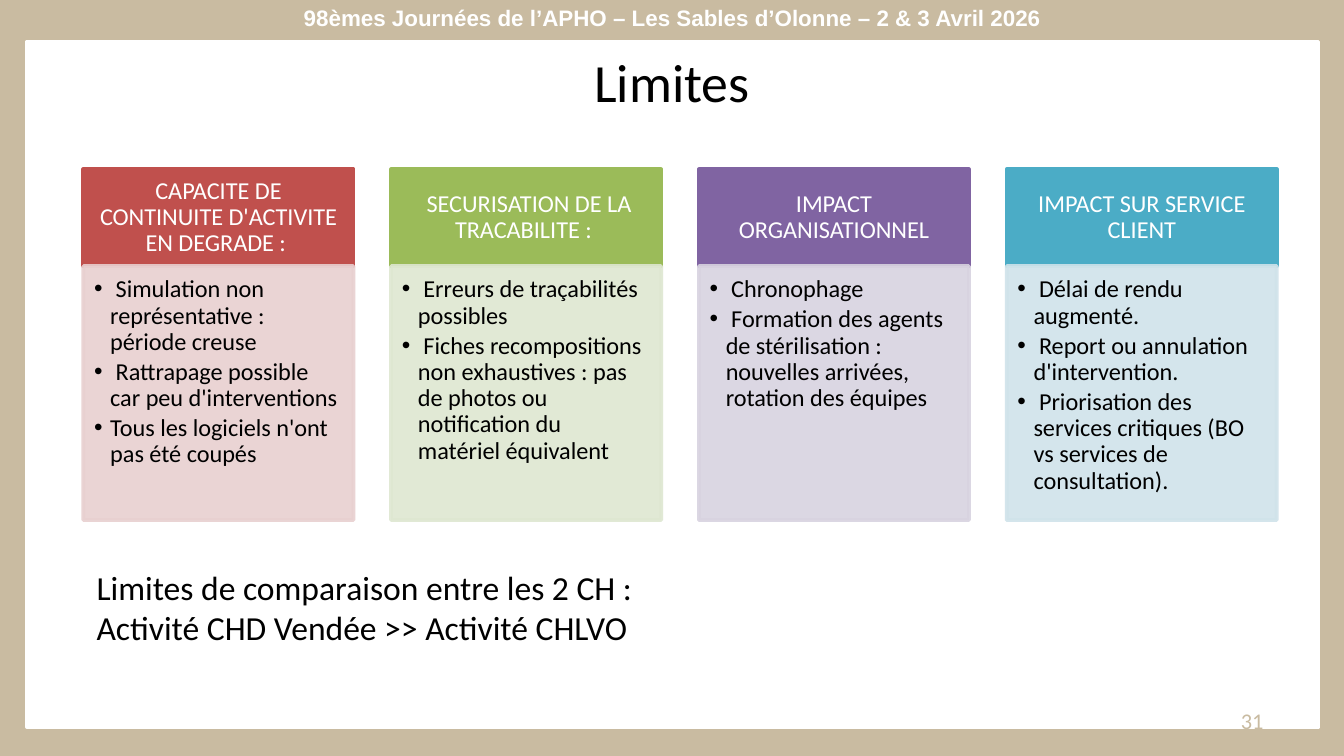
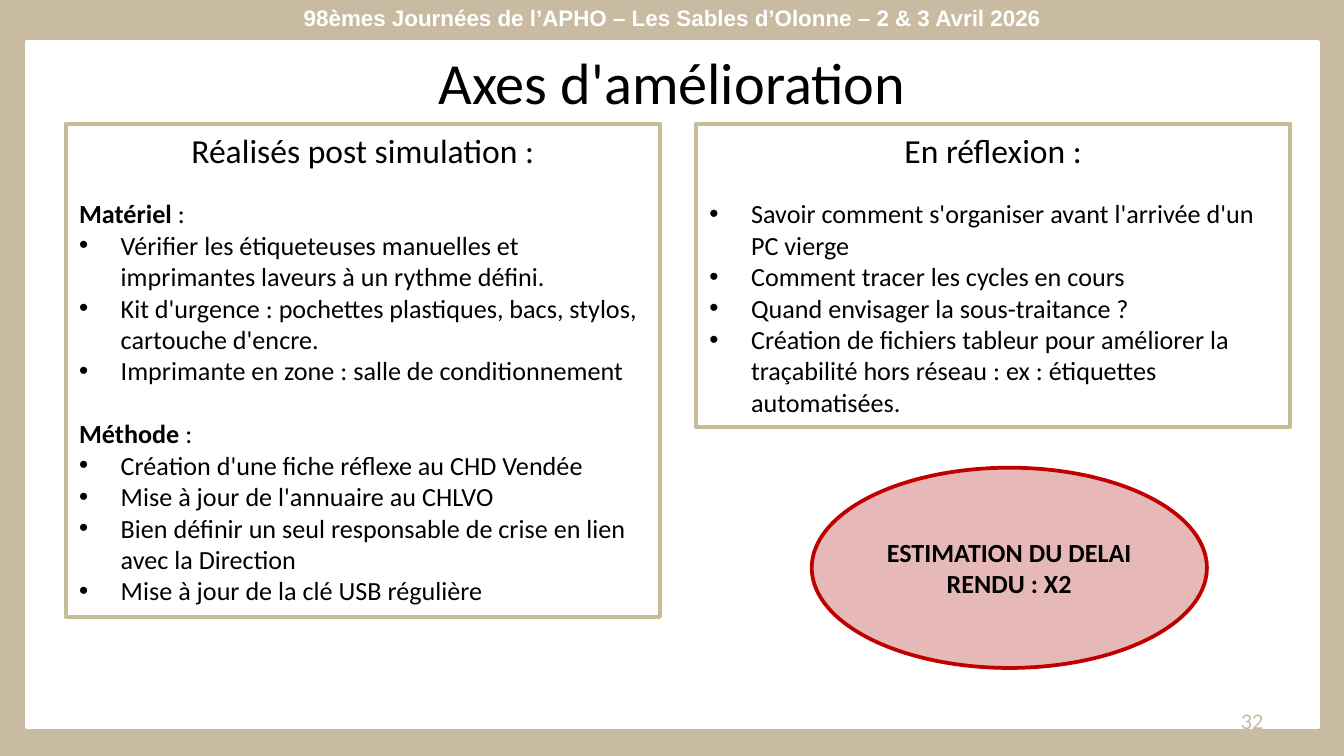
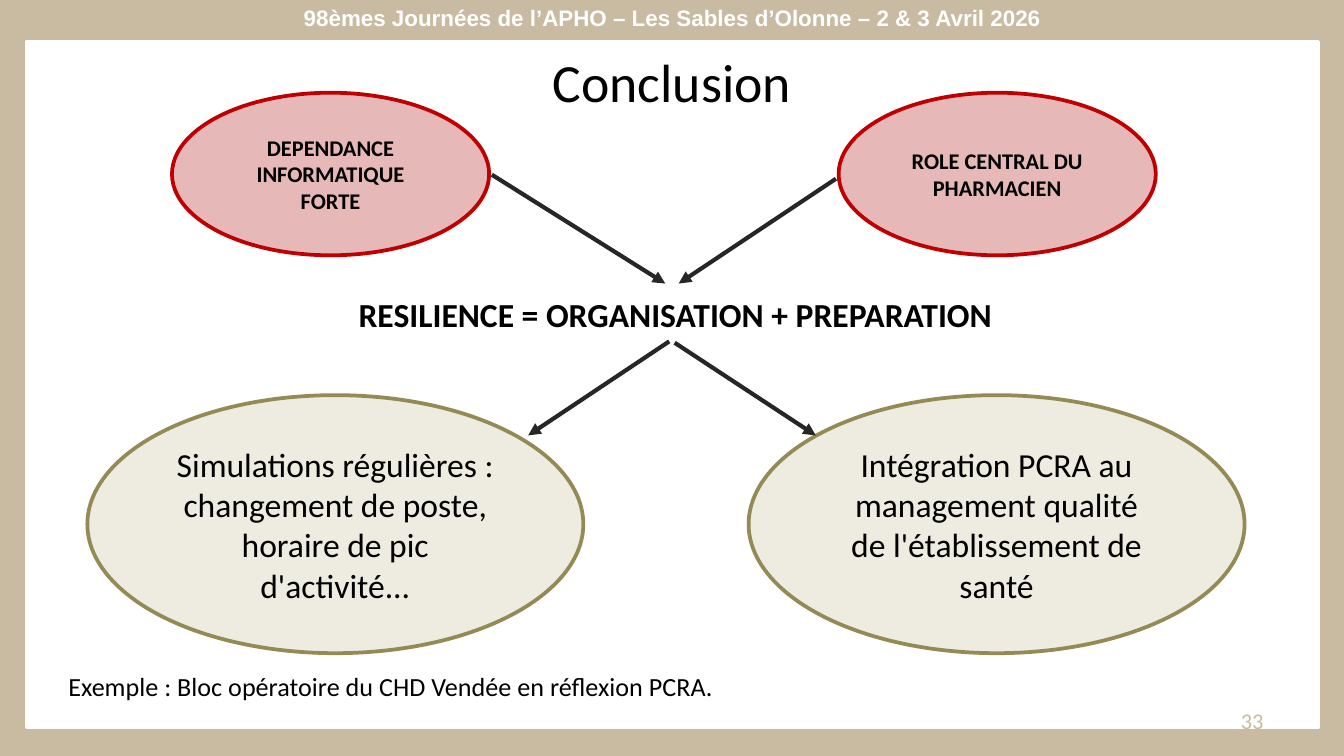
from lxml import etree
from pptx import Presentation
from pptx.dml.color import RGBColor
from pptx.enum.shapes import MSO_CONNECTOR, MSO_SHAPE
from pptx.enum.text import MSO_ANCHOR, PP_ALIGN
from pptx.oxml.ns import qn
from pptx.util import Inches, Pt

# Enum members
RECTANGLE, ELLIPSE = MSO_SHAPE.RECTANGLE, MSO_SHAPE.OVAL
STRAIGHT = MSO_CONNECTOR.STRAIGHT
LEFT, CENTER, RIGHT = PP_ALIGN.LEFT, PP_ALIGN.CENTER, PP_ALIGN.RIGHT
TOP, MIDDLE = MSO_ANCHOR.TOP, MSO_ANCHOR.MIDDLE

# Colours
SAND = RGBColor(0xC9, 0xBB, 0xA1)
WHITE = RGBColor(0xFF, 0xFF, 0xFF)
BLACK = RGBColor(0x00, 0x00, 0x00)
CHARCOAL = RGBColor(0x26, 0x26, 0x26)
KHAKI = RGBColor(0xC4, 0xBD, 0x97)
CREAM = RGBColor(0xEE, 0xEC, 0xE1)
OLIVE = RGBColor(0x94, 0x8A, 0x54)
PINK = RGBColor(0xE6, 0xB9, 0xB8)
DARK_RED = RGBColor(0xC0, 0x00, 0x00)
RED, PALE_RED = RGBColor(0xC0, 0x50, 0x4D), RGBColor(0xE8, 0xD0, 0xD0)
GREEN, PALE_GREEN = RGBColor(0x9B, 0xBB, 0x59), RGBColor(0xDE, 0xE7, 0xD1)
PURPLE, PALE_PURPLE = RGBColor(0x80, 0x64, 0xA2), RGBColor(0xD8, 0xD3, 0xE0)
BLUE, PALE_BLUE = RGBColor(0x4B, 0xAC, 0xC6), RGBColor(0xD0, 0xE3, 0xEA)

BODY_FONT, BAND_FONT = "Calibri", "Arial"
BAND_TEXT = "98èmes Journées de l’APHO – Les Sables d’Olonne – 2 & 3 Avril 2026"
DEFAULT_MARGINS = (0.1, 0.05, 0.1, 0.05)

LIMITS = [
    ("CAPACITE DE CONTINUITE D'ACTIVITE EN DEGRADE : ", RED, PALE_RED,
     [" Simulation non représentative : période creuse",
      " Rattrapage possible car peu d'interventions",
      "Tous les logiciels n'ont pas été coupés"]),
    (" SECURISATION DE LA TRACABILITE : ", GREEN, PALE_GREEN,
     [" Erreurs de traçabilités possibles",
      " Fiches recompositions non exhaustives : pas de photos ou "
      "notification du matériel équivalent"]),
    ("IMPACT ORGANISATIONNEL", PURPLE, PALE_PURPLE,
     [" Chronophage",
      " Formation des agents de stérilisation : nouvelles arrivées, "
      "rotation des équipes"]),
    ("IMPACT SUR SERVICE CLIENT", BLUE, PALE_BLUE,
     [" Délai de rendu augmenté.",
      " Report ou annulation d'intervention.",
      " Priorisation des services critiques (BO vs services de consultation)."]),
]

# Each section: heading (or None), bullets
DONE = [
    ("Matériel",
     ["Vérifier les étiqueteuses manuelles et imprimantes laveurs à un rythme défini.",
      "Kit d'urgence : pochettes plastiques, bacs, stylos, cartouche d'encre.",
      "Imprimante en zone : salle de conditionnement"]),
    ("Méthode",
     ["Création d'une fiche réflexe au CHD Vendée",
      "Mise à jour de l'annuaire au CHLVO",
      "Bien définir un seul responsable de crise en lien avec la Direction",
      "Mise à jour de la clé USB régulière"]),
]
PLANNED = [
    (None,
     ["Savoir comment s'organiser avant l'arrivée d'un PC vierge",
      "Comment tracer les cycles en cours",
      "Quand envisager la sous-traitance ?",
      "Création de fichiers tableur pour améliorer la traçabilité hors réseau : "
      "ex : étiquettes automatisées."]),
]


# Text
def prepare_frame(shape, anchor=TOP, margins=DEFAULT_MARGINS):
    frame = shape.text_frame
    frame.word_wrap = True
    frame.vertical_anchor = anchor
    (frame.margin_left, frame.margin_top,
     frame.margin_right, frame.margin_bottom) = map(Inches, margins)
    return frame


def add_paragraph(frame, runs, size, color=BLACK, align=LEFT, font=BODY_FONT,
                  indent=0, before=0, after=0, spacing=1.0):
    """Write (text, bold) runs; a positive indent makes a bullet."""
    first = frame.paragraphs[0]
    paragraph = frame.add_paragraph() if first.runs else first
    if indent:
        properties = paragraph._p.get_or_add_pPr()
        properties.set("marL", str(Inches(indent)))
        properties.set("indent", str(-Inches(indent)))
        bullet_font = etree.SubElement(properties, qn("a:buFont"))
        bullet_font.set("typeface", BAND_FONT)
        etree.SubElement(properties, qn("a:buChar")).set("char", "•")
    paragraph.alignment = align
    paragraph.line_spacing = spacing
    paragraph.space_before = Pt(before)
    paragraph.space_after = Pt(after)
    for text, bold in runs:
        run = paragraph.add_run()
        run.text = text
        run.font.name = font
        run.font.size = Pt(size)
        run.font.bold = bold
        run.font.color.rgb = color


def add_text(slide, box, lines, size, bold=False, anchor=TOP, **style):
    textbox = slide.shapes.add_textbox(*map(Inches, box))
    frame = prepare_frame(textbox, anchor)
    for line in lines:
        add_paragraph(frame, [(line, bold)], size, **style)


# Shapes
def set_opacity(shape, percent):
    for color in shape._element.spPr.iter(qn("a:srgbClr")):
        etree.SubElement(color, qn("a:alpha")).set("val", str(percent * 1000))


def add_panel(slide, kind, box, fill, line, width=2):
    shape = slide.shapes.add_shape(kind, *map(Inches, box))
    shape.shadow.inherit = False
    if fill is None:
        shape.fill.background()
    else:
        shape.fill.solid()
        shape.fill.fore_color.rgb = fill
    shape.line.color.rgb = line
    shape.line.width = Pt(width)
    return shape


def add_ellipse(slide, box, text, size, fill, line, bold=False):
    ellipse = add_panel(slide, ELLIPSE, box, fill, line)
    frame = prepare_frame(ellipse, MIDDLE)
    add_paragraph(frame, [(text, bold)], size, align=CENTER)


def add_arrow(slide, start, end):
    arrow = slide.shapes.add_connector(STRAIGHT, *map(Inches, start + end))
    arrow.line.color.rgb = CHARCOAL
    arrow.line.width = Pt(2.25)
    etree.SubElement(arrow.line._get_or_add_ln(), qn("a:tailEnd")).set("type", "triangle")
    etree.SubElement(arrow._element.spPr, qn("a:effectLst"))


def add_limit_column(slide, left, heading, strong, pale, bullets):
    top, width, head_height, body_height = 1.26, 2.01, 0.72, 1.89
    head = add_panel(slide, RECTANGLE, (left, top, width, head_height), strong, strong)
    frame = prepare_frame(head, MIDDLE, (0.1, 0.06, 0.1, 0.06))
    add_paragraph(frame, [(heading, False)], 13, WHITE, CENTER, spacing=0.9)

    body = add_panel(slide, RECTANGLE,
                     (left, top + head_height, width, body_height), pale, pale)
    set_opacity(body, 90)
    frame = prepare_frame(body, TOP, (0.08, 0.08, 0.1, 0.11))
    for bullet in bullets:
        add_paragraph(frame, [(bullet, False)], 13, indent=0.12, after=2, spacing=0.9)


def add_action_box(slide, left, height, title, sections):
    box = add_panel(slide, RECTANGLE, (left, 0.92, 4.42, height), None, KHAKI, 2.25)
    frame = prepare_frame(box)
    add_paragraph(frame, [(title, False)], 18, align=CENTER)
    gap = 14.6
    for heading, bullets in sections:
        if heading:
            add_paragraph(frame, [(heading, True), (" :", False)], 14, before=gap)
            gap = 0
        for bullet in bullets:
            add_paragraph(frame, [(bullet, False)], 14, indent=0.31, before=gap)
            gap = 0
        gap = 17


# Shared slide frame: background, white page, number, band and title
def add_slide(presentation, number, title, title_size=28.8):
    slide = presentation.slides.add_slide(presentation.slide_layouts[6])
    slide.background.fill.solid()
    slide.background.fill.fore_color.rgb = SAND
    add_panel(slide, RECTANGLE, (0.2, 0.31, 9.61, 5.1), WHITE, WHITE)
    add_text(slide, (7.17, 5.21, 2.33, 0.3), [str(number)], 12, color=SAND, align=RIGHT)
    add_text(slide, (0.2, -0.02, 9.61, 0.5), [BAND_TEXT], 12, bold=True,
             color=WHITE, align=CENTER, font=BAND_FONT)
    add_text(slide, (0.5, 0.29, 9, 0.63), [title], title_size, anchor=MIDDLE, align=CENTER)
    return slide


def build_limits(presentation):
    slide = add_slide(presentation, 31, "Limites")
    for index, limit in enumerate(LIMITS):
        add_limit_column(slide, 0.62 + 2.29 * index, *limit)
    add_text(slide, (0.62, 4.17, 8.88, 0.71),
             ["Limites de comparaison entre les 2 CH :",
              "Activité CHD Vendée >> Activité CHLVO"], 18)


def build_improvements(presentation):
    slide = add_slide(presentation, 32, "Axes d'amélioration", 31.2)
    add_action_box(slide, 0.49, 3.67, "Réalisés post simulation :", DONE)
    add_action_box(slide, 5.18, 2.26, "En réflexion :", PLANNED)
    add_ellipse(slide, (6.04, 3.48, 2.94, 1.49), "ESTIMATION DU DELAI RENDU : X2",
                14, PINK, DARK_RED, bold=True)


def build_conclusion(presentation):
    slide = add_slide(presentation, 33, "Conclusion")
    # Findings
    for left, text in ((6.24, "ROLE CENTRAL DU PHARMACIEN"),
                       (1.28, "DEPENDANCE INFORMATIQUE FORTE")):
        add_ellipse(slide, (left, 0.69, 2.36, 1.21), text, 12, PINK, DARK_RED, bold=True)
    add_text(slide, (2.57, 2.14, 4.96, 0.4),
             ["RESILIENCE = ORGANISATION + PREPARATION"], 18, bold=True)
    # Actions
    for left, text in (
            (0.65, "Simulations régulières : changement de poste, "
                   "horaire de pic d'activité..."),
            (5.57, "Intégration PCRA au management qualité "
                   "de l'établissement de santé")):
        add_ellipse(slide, (left, 2.94, 3.69, 1.92), text, 18, CREAM, OLIVE)
    # Arrows into and out of the central statement
    for start, end in (((3.66, 1.3), (4.95, 2.11)), ((6.22, 1.33), (5.05, 2.11)),
                       ((5.02, 2.55), (6.07, 3.24)), ((4.98, 2.54), (3.93, 3.24))):
        add_arrow(slide, start, end)
    add_text(slide, (0.41, 4.94, 5.05, 0.34),
             ["Exemple : Bloc opératoire du CHD Vendée en réflexion PCRA."], 14)


def main():
    presentation = Presentation()
    # Widescreen, 16:9
    presentation.slide_width = Inches(10)
    presentation.slide_height = Inches(10) * 9 // 16
    build_limits(presentation)
    build_improvements(presentation)
    build_conclusion(presentation)
    presentation.save("out.pptx")


if __name__ == "__main__":
    main()
